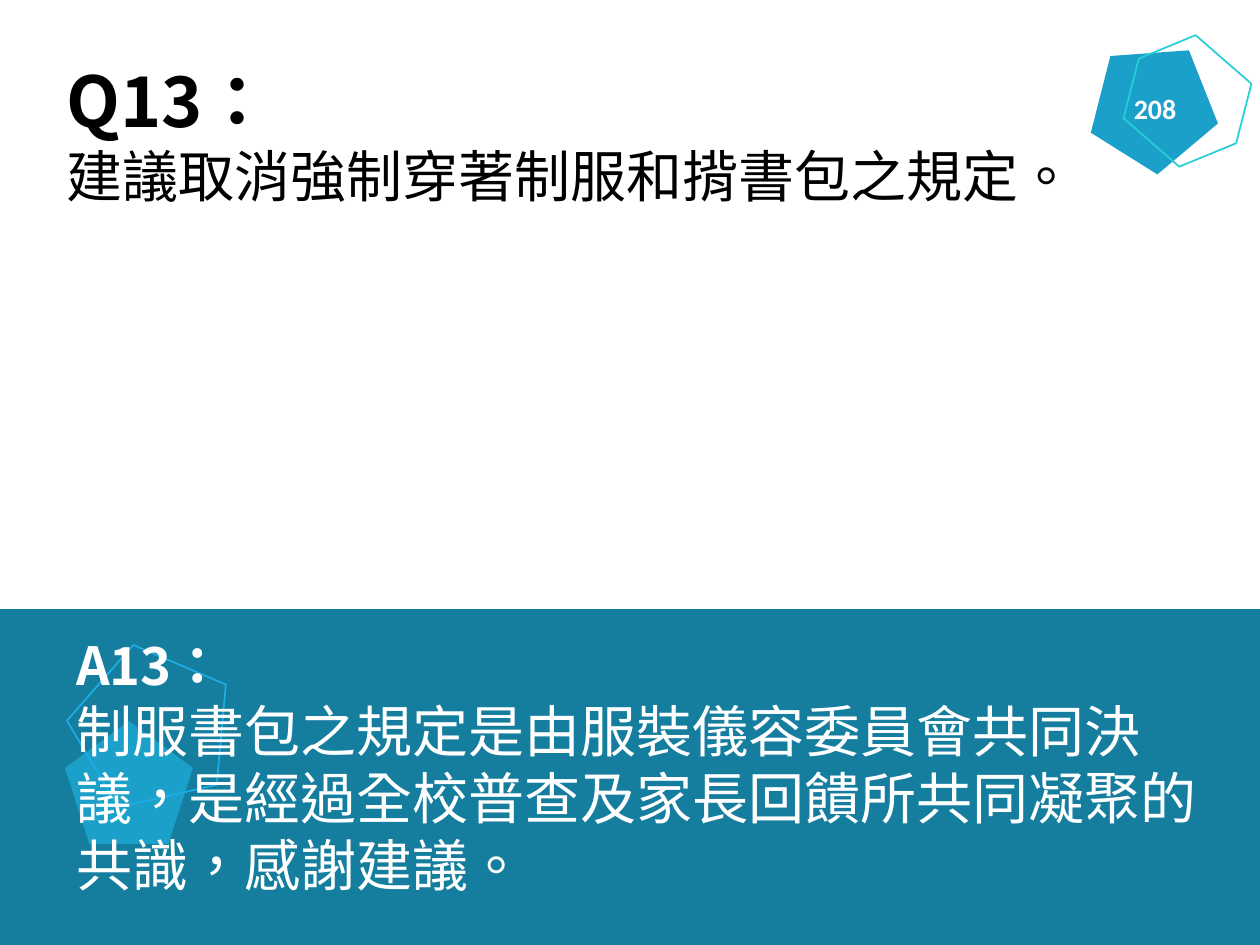
from pptx import Presentation
from pptx.dml.color import RGBColor
from pptx.enum.lang import MSO_LANGUAGE_ID
from pptx.enum.shapes import MSO_SHAPE
from pptx.enum.text import MSO_AUTO_SIZE, PP_ALIGN
from pptx.util import Pt
from lxml import etree

RECTANGLE, PENTAGON, HEXAGON = MSO_SHAPE.RECTANGLE, MSO_SHAPE.REGULAR_PENTAGON, MSO_SHAPE.HEXAGON
LEFT, CENTER, JUSTIFY = PP_ALIGN.LEFT, PP_ALIGN.CENTER, PP_ALIGN.JUSTIFY
FIT_SHAPE = MSO_AUTO_SIZE.SHAPE_TO_FIT_TEXT
TAIWAN = MSO_LANGUAGE_ID.TRADITIONAL_CHINESE
DRAWING = "http://schemas.openxmlformats.org/drawingml/2006/main"

EMU_PER_PX = 914400 / 126
LINE_RATIO = 1.2
HEADING_FONT, BODY_FONT = "Noto Sans CJK SC", "Calibri"
BLACK, WHITE = "000000", "FFFFFF"

SHAPES = [
    (RECTANGLE, (0, 609, 1260, 336), 0, "157E9F", None),
    (PENTAGON, (1093, 41, 127, 122), 32.1, "1BA0C9", None),
    (PENTAGON, (65, 721, 128, 123), 0, "1BA0C9", None),
    (PENTAGON, (69, 643, 163, 155), 347.2, None, "1CADE4"),
    (HEXAGON, (1123, 46, 129, 110), 41, None, "27CED7"),
]
QUESTION = [
    ("Q13：", dict(size=40, font=HEADING_FONT, bold=True)),
    ("建議取消強制穿著制服和揹書包之規定。", dict(size=32, align=JUSTIFY)),
]
ANSWER = [
    ("A13：", dict(size=30, font=HEADING_FONT, color=WHITE, bold=True)),
    ("制服書包之規定是由服裝儀容委員會共同決議，是經過全校普查及家長回饋所共同凝聚的共識，感謝建議。",
     dict(size=32, color=WHITE)),
]
PAGE_NUMBER = [("208", dict(size=16, color=WHITE, bold=True, align=CENTER))]
TEXTS = [
    ((54, 51, 1050, 165), QUESTION, True),
    ((64, 627, 1171, 280), ANSWER, True),
    ((1121, 85, 68, 47), PAGE_NUMBER, False),
]


def emu(*lengths):
    return [round(length * EMU_PER_PX) for length in lengths]


def rgb(value):
    return RGBColor.from_string(value)


def draw_shape(page, kind, place, rotation, fill, line):
    shape = page.shapes.add_shape(kind, *emu(*place))
    shape.shadow.inherit = False
    shape.rotation = rotation
    if fill:
        shape.fill.solid()
        shape.fill.fore_color.rgb = rgb(fill)
    else:
        shape.fill.background()
    if line:
        shape.line.color.rgb = rgb(line)
        shape.line.width = Pt(1)
    else:
        shape.line.fill.background()


def write(para, text, size, font=BODY_FONT, color=BLACK, bold=False, align=LEFT):
    para.alignment = align
    para.line_spacing = Pt(round(size * LINE_RATIO, 1))
    para._p.get_or_add_pPr().set("hangingPunct", "0")
    span = para.add_run()
    span.text = text
    span.font.size = Pt(size)
    span.font.name = font
    span.font.bold = bold
    span.font.color.rgb = rgb(color)
    span.font.language_id = TAIWAN
    latin = span.font._element.find(f"{{{DRAWING}}}latin")
    latin.addnext(etree.Element(f"{{{DRAWING}}}ea", typeface=font))


def draw_text(page, place, paragraphs, wrap):
    frame = page.shapes.add_textbox(*emu(*place)).text_frame
    frame.word_wrap = wrap
    frame.auto_size = FIT_SHAPE
    for index, (text, style) in enumerate(paragraphs):
        para = frame.add_paragraph() if index else frame.paragraphs[0]
        write(para, text, **style)


def main():
    """Build the question and answer slide."""
    deck = Presentation()
    deck.slide_width, deck.slide_height = emu(1260, 945)
    page = deck.slides.add_slide(deck.slide_layouts[6])
    for shape in SHAPES:
        draw_shape(page, *shape)
    for text in TEXTS:
        draw_text(page, *text)
    deck.save("out.pptx")


if __name__ == "__main__":
    main()
